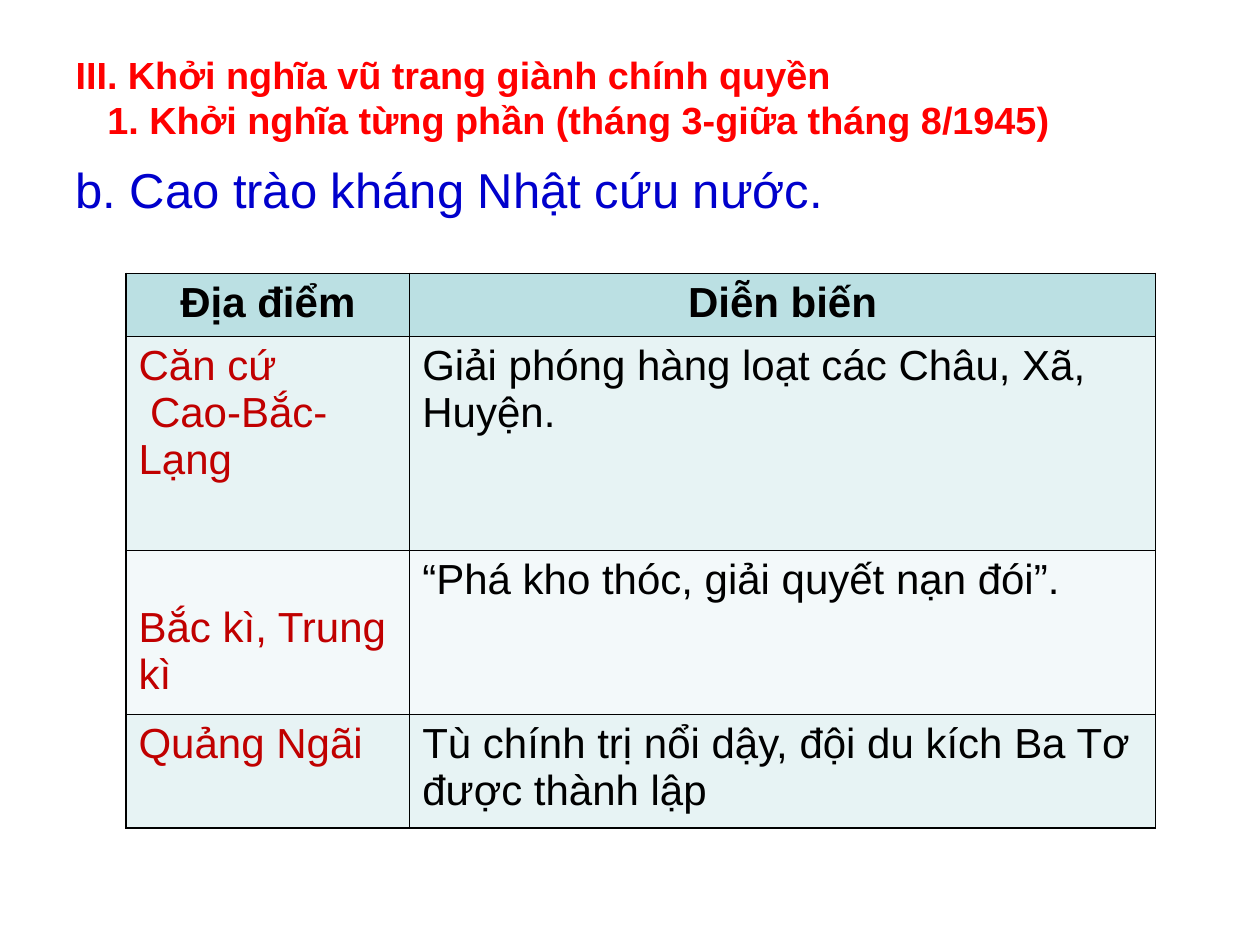
from lxml import etree
from pptx import Presentation
from pptx.dml.color import RGBColor
from pptx.enum import text
from pptx.oxml import ns
from pptx.util import Cm, Pt

FONT = "Arial"
COLORS = {"title": "FF0000", "subtitle": "0000CC", "place": "C00000", "body": "000000",
          "header": "BBE0E3", "odd": "E7F3F4", "even": "F3F9FA", "border": "000000"}
TITLE = ["III. Khởi nghĩa vũ trang giành chính quyền",
         "1. Khởi nghĩa từng phần (tháng 3-giữa tháng 8/1945)"]
SUBTITLE = "b. Cao trào kháng Nhật cứu nước."
HEADERS = ("Địa điểm", "Diễn biến")
EVENTS = [
    ("Căn cứ\nCao-Bắc-Lạng", "Giải phóng hàng loạt các Châu, Xã, Huyện."),
    ("Bắc kì, Trung kì", "“Phá kho thóc, giải quyết nạn đói”."),
    ("Quảng Ngãi", "Tù chính trị nổi dậy, đội du kích Ba Tơ được thành lập"),
]
COLUMN_WIDTHS = (5.72, 15.03)
ROW_HEIGHTS = (1.27, 4.32, 3.3, 2.29)


def format_text(frame, size, color, bold=False, align=text.PP_ALIGN.LEFT):
    """Apply one font and alignment to all text in a frame."""
    for paragraph in frame.paragraphs:
        paragraph.alignment = align
        for run in paragraph.runs:
            run.font.name = FONT
            run.font.size = Pt(size)
            run.font.bold = bold
            run.font.color.rgb = RGBColor.from_string(COLORS[color])


def set_indent(paragraph, left=0, first=0):
    """Set the left margin and the first-line indent in centimetres."""
    properties = paragraph._p.get_or_add_pPr()
    properties.set("marL", str(Cm(left)))
    properties.set("indent", str(Cm(first)))


def set_borders(cell):
    """Draw a thin solid line on each side of a cell."""
    properties = cell._tc.get_or_add_tcPr()
    for position, side in enumerate(("lnL", "lnR", "lnT", "lnB")):
        line = etree.Element(ns.qn(f"a:{side}"), w=str(Pt(1)))
        fill = etree.SubElement(line, ns.qn("a:solidFill"))
        etree.SubElement(fill, ns.qn("a:srgbClr"), val=COLORS["border"])
        properties.insert(position, line)


def add_title(slide):
    """Fill and place the title placeholder."""
    title = slide.shapes.title
    title.left, title.top, title.width, title.height = Cm(1.27), Cm(0.76), Cm(22.86), Cm(3.18)
    frame = title.text_frame
    frame.text = "\n".join(TITLE)
    frame.vertical_anchor = text.MSO_ANCHOR.TOP
    frame.margin_top = Cm(0.28)
    format_text(frame, 21.6, "title", bold=True)
    set_indent(frame.paragraphs[1], left=0.64)


def add_subtitle(slide):
    """Add the subheading below the title."""
    frame = slide.shapes.add_textbox(Cm(1.27), Cm(2.97), Cm(22.86), Cm(1.6)).text_frame
    frame.word_wrap = True
    frame.margin_top = Cm(0.25)
    frame.text = SUBTITLE
    format_text(frame, 28, "subtitle")


def add_events(slide):
    """Add the table of places and events."""
    rows = [HEADERS, *EVENTS]
    table = slide.shapes.add_table(len(rows), len(HEADERS), Cm(2.54), Cm(5.51),
                                   Cm(sum(COLUMN_WIDTHS)), Cm(sum(ROW_HEIGHTS))).table
    for column, width in zip(table.columns, COLUMN_WIDTHS):
        column.width = Cm(width)
    for row, height in zip(table.rows, ROW_HEIGHTS):
        row.height = Cm(height)
    for r, values in enumerate(rows):
        band = "header" if r == 0 else "odd" if r % 2 else "even"
        for c, value in enumerate(values):
            cell = table.cell(r, c)
            cell.text_frame.text = value
            cell.fill.solid()
            cell.fill.fore_color.rgb = RGBColor.from_string(COLORS[band])
            set_borders(cell)
            if r == 0:
                format_text(cell.text_frame, 24, "body", True, text.PP_ALIGN.CENTER)
            else:
                format_text(cell.text_frame, 24, "body" if c else "place")
    set_indent(table.cell(1, 0).text_frame.paragraphs[1], first=0.23)
    table.cell(2, 0).margin_top = Cm(1.08)


def main():
    """Build and save the slide."""
    presentation = Presentation()
    presentation.slide_width, presentation.slide_height = Cm(25.4), Cm(19.05)
    slide = presentation.slides.add_slide(presentation.slide_layouts[5])
    add_title(slide)
    add_subtitle(slide)
    add_events(slide)
    presentation.save("out.pptx")


if __name__ == "__main__":
    main()
